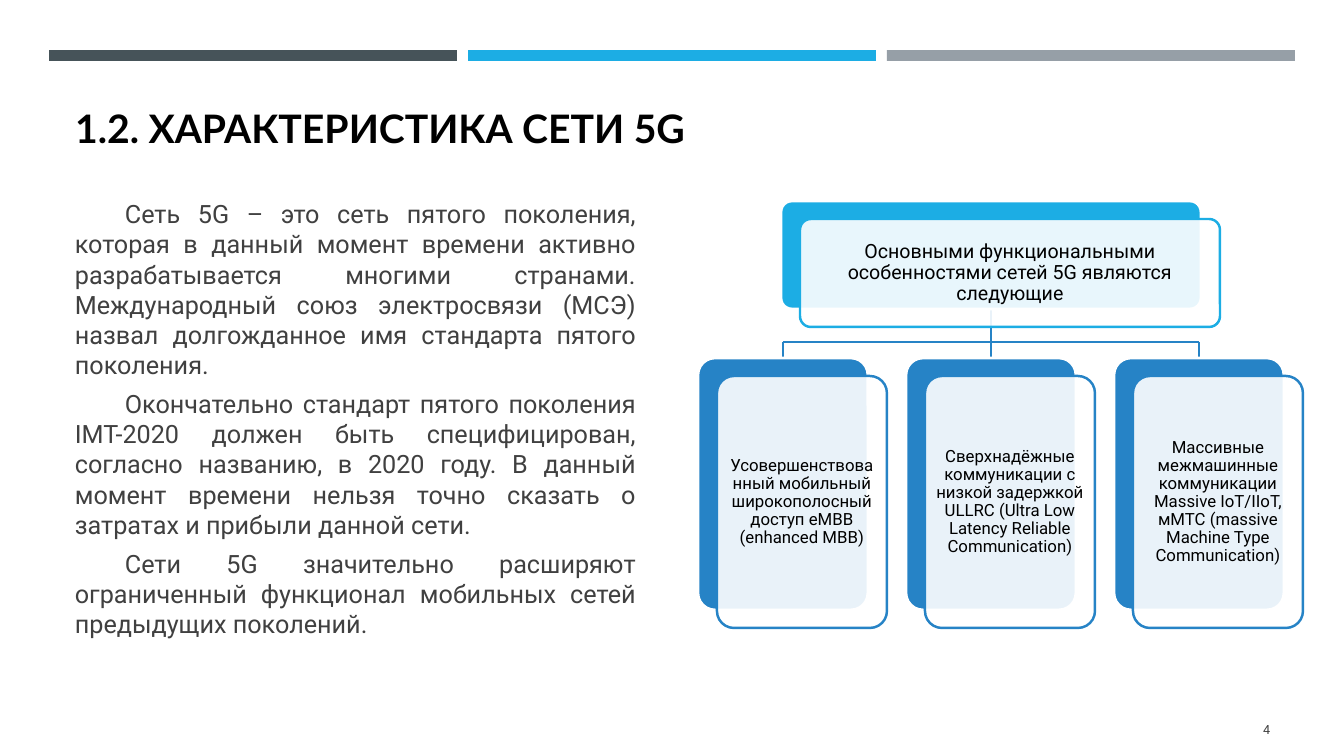
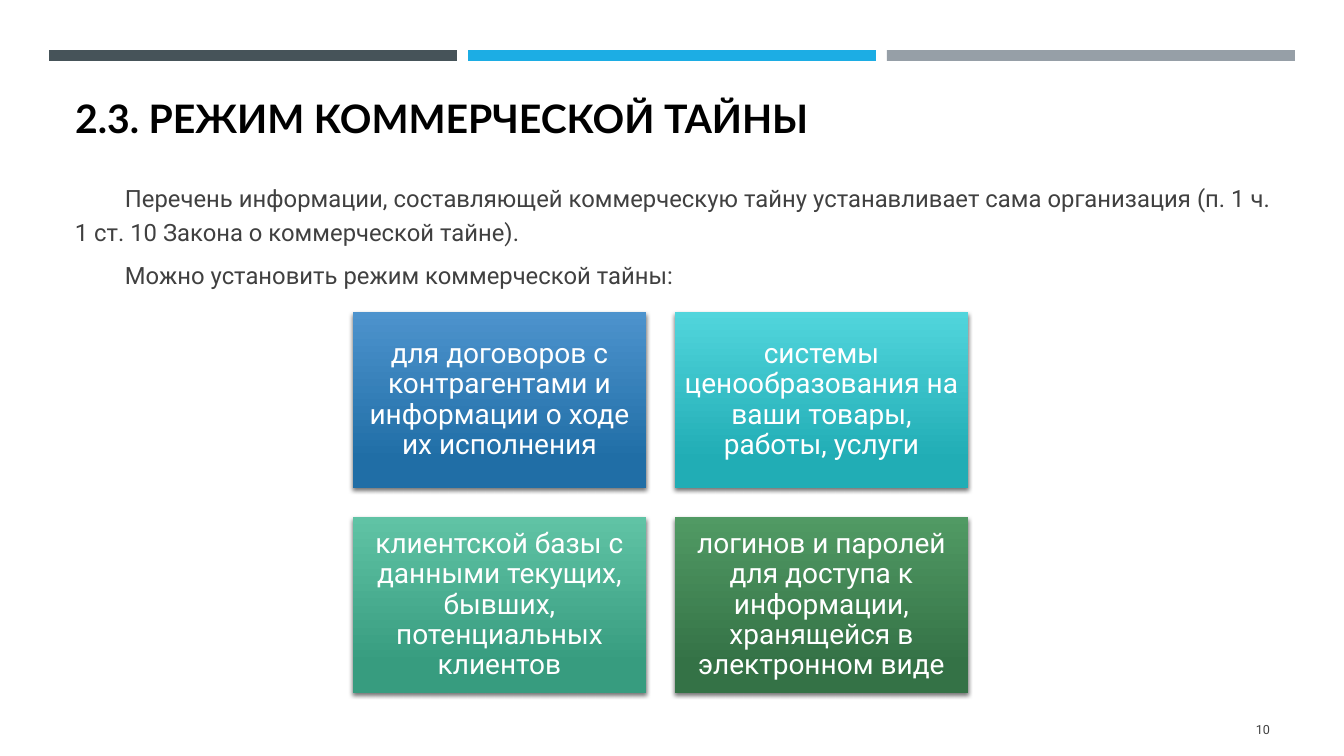
from lxml.etree import SubElement
from pptx import Presentation
from pptx.dml.color import RGBColor
from pptx.enum.shapes import MSO_CONNECTOR, MSO_SHAPE
from pptx.enum.text import MSO_ANCHOR, MSO_AUTO_SIZE, PP_ALIGN
from pptx.oxml.ns import qn
from pptx.util import Pt

RECT, ROUND = MSO_SHAPE.RECTANGLE, MSO_SHAPE.ROUNDED_RECTANGLE
LINE = MSO_CONNECTOR.STRAIGHT
MID, LOW = MSO_ANCHOR.MIDDLE, MSO_ANCHOR.BOTTOM
LEFT, RIGHT = PP_ALIGN.LEFT, PP_ALIGN.RIGHT
MIDDLE, JUST = PP_ALIGN.CENTER, PP_ALIGN.JUSTIFY
NO_FIT = MSO_AUTO_SIZE.NONE

SCALE = 914400 / 100.8
HEAD, BODY = "Lato", "Roboto"
COLOR = {
    "slate": "465359", "sky": "1CADE4", "gray": "969FA7", "blue": "2683C6",
    "text": "404040", "black": "000000", "white": "FFFFFF",
}

FACTS = [
    "Сеть 5G – это сеть пятого поколения, которая в данный момент времени активно "
    "разрабатывается многими странами. Международный союз электросвязи (МСЭ) назвал "
    "долгожданное имя стандарта пятого поколения.",
    "Окончательно стандарт пятого поколения IMT-2020 должен быть специфицирован, "
    "согласно названию, в 2020 году. В данный момент времени нельзя точно сказать "
    "о затратах и прибыли данной сети.",
    "Сети 5G значительно расширяют ограниченный функционал мобильных сетей "
    "предыдущих поколений.",
]
ROOT = "Основными функциональными особенностями сетей 5G являются следующие"
KINDS = [
    "Усовершенствованный мобильный широкополосный доступ eMBB (enhanced MBB)",
    "Сверхнадёжные коммуникации с низкой задержкой ULLRC "
    "(Ultra Low Latency Reliable Communication)",
    "Массивные межмашинные коммуникации Massive IoT/IIoT, мMTC "
    "(massive Machine Type Communication)",
]
RULES = [
    "Перечень информации, составляющей коммерческую тайну устанавливает сама "
    "организация (п. 1 ч. 1 ст. 10 Закона о коммерческой тайне).",
    "Можно установить режим коммерческой тайны:",
]
TILES = [
    ("для договоров с контрагентами и информации о ходе их исполнения",
     "4D93CD", "206EA6"),
    ("системы ценообразования на ваши товары, работы, услуги", "51D5DC", "21ADB5"),
    ("клиентской базы с данными текущих, бывших, потенциальных клиентов",
     "60C3A5", "379C7F"),
    ("логинов и паролей для доступа к информации, хранящейся в электронном виде",
     "519A64", "347246"),
]


def px(*vals):
    """Turn px lengths into EMU."""
    return [round(v * SCALE) for v in vals]


def rgb(name):
    """Look up a named colour, or read a hex string."""
    return RGBColor.from_string(COLOR.get(name, name))


def write(shape, texts, size, color, align, anchor=MID, font=BODY, bold=False,
          inset=None, indent=0, after=0, space=1.0):
    """Fill a shape with evenly styled paragraphs."""
    frame = shape.text_frame
    frame.word_wrap = True
    frame.auto_size = NO_FIT
    frame.vertical_anchor = anchor
    if inset is not None:
        frame.margin_left = frame.margin_right = px(inset)[0]
        frame.margin_top = frame.margin_bottom = px(inset)[0]
    for i, text in enumerate(texts):
        para = frame.add_paragraph() if i else frame.paragraphs[0]
        para.text = text
        para.alignment = align
        para.line_spacing = space
        para.space_before, para.space_after = Pt(0), Pt(after)
        para.font.name, para.font.size = font, Pt(size)
        para.font.bold, para.font.color.rgb = bold, rgb(color)
        if indent:
            para._p.get_or_add_pPr().set("indent", str(px(indent)[0]))


def label(slide, box, texts, size, color, align, **style):
    """Add a text box."""
    write(slide.shapes.add_textbox(*px(*box)), texts, size, color, align, **style)


def block(slide, kind, box, fill=None, edge=None, width=0):
    """Add a flat shape with an optional fill and edge."""
    shape = slide.shapes.add_shape(kind, *px(*box))
    shape.shadow.inherit = False
    if fill:
        shape.fill.solid()
        shape.fill.fore_color.rgb = rgb(fill)
    if edge:
        shape.line.color.rgb = rgb(edge)
        shape.line.width = Pt(width)
    else:
        shape.line.fill.background()
    return shape


def link(slide, *ends):
    """Draw a plain blue line."""
    line = slide.shapes.add_connector(LINE, *px(*ends))
    line.line.color.rgb = rgb("blue")
    line.line.width = Pt(1.75)
    SubElement(line._element.spPr, qn("a:effectLst"))


def page(deck, title, high, number):
    """Start a slide with bands, title and page number."""
    slide = deck.slides.add_slide(deck.slide_layouts[5])
    for i, name in enumerate(("slate", "sky", "gray")):
        block(slide, RECT, (49 + i * 419, 50, 408, 11), name)
    head = slide.shapes.title
    head.left, head.top, head.width, head.height = px(65, 78, 1216, high)
    write(head, [title], 28, "black", LEFT, LOW, HEAD, True)
    label(slide, (1164, 709, 116, 40), [number], 9, "text", RIGHT)
    return slide


def card(slide, box, color, text, size):
    """Add a filled card with a pale text card shifted over it."""
    x, y, w, h = box
    block(slide, ROUND, box, color, "white", 2).adjustments[0] = 0.1
    front = block(slide, ROUND, (x + 19, y + 18, w, h), "white", color, 1.75)
    front.adjustments[0] = 0.1
    tint = front._element.spPr.find(qn("a:solidFill"))[0]
    SubElement(tint, qn("a:alpha"), val="90000")
    write(front, [text], size, "black", MIDDLE, inset=5, space=0.9)


def tree(slide, box):
    """Draw a root card joined to a row of child cards."""
    x, y, w, h = box
    wide, tall, root_w, root_h = 170, 252, 420, 108
    step = (w - wide) // (len(KINDS) - 1)
    top = y + h - tall
    bar = top - 16
    mids = [x + wide // 2 + i * step for i in range(len(KINDS))]
    hub = x + w // 2
    link(slide, hub, y + root_h, hub, bar)
    link(slide, mids[0], bar, mids[-1], bar)
    for mid in mids:
        link(slide, mid, bar, mid, top)
    card(slide, (hub - root_w // 2, y, root_w, root_h), "sky", ROOT, 14)
    for mid, text in zip(mids, KINDS):
        card(slide, (mid - wide // 2, top, wide, tall), "blue", text, 12)


def tile(slide, box, text, light, dark):
    """Add a shaded tile with a soft shadow."""
    shape = block(slide, RECT, box)
    shape.fill.gradient()
    shape.fill.gradient_angle = 270
    for stop, spot, color in zip(shape.fill.gradient_stops, (0, 0.84), (light, dark)):
        stop.position = spot
        stop.color.rgb = rgb(color)
    glow = SubElement(shape._element.spPr.find(qn("a:effectLst")), qn("a:outerShdw"),
                      blurRad=str(Pt(3)), dist=str(Pt(2)), dir="5400000",
                      rotWithShape="0")
    tint = SubElement(glow, qn("a:srgbClr"), val=COLOR["black"])
    SubElement(tint, qn("a:alpha"), val="55000")
    write(shape, [text], 20, "white", MIDDLE, inset=8, space=0.9)


def grid(slide, box, gap):
    """Lay the tiles out in two columns."""
    x, y, w, h = box
    wide, tall = (w - gap) // 2, (h - gap) // 2
    for i, item in enumerate(TILES):
        row, col = divmod(i, 2)
        spot = (x + col * (wide + gap), y + row * (tall + gap), wide, tall)
        tile(slide, spot, *item)


def main():
    """Build and save both slides."""
    deck = Presentation()
    deck.slide_width, deck.slide_height = px(1344, 756)

    slide = page(deck, "1.2. ХАРАКТЕРИСТИКА СЕТИ 5G", 78, "4")
    label(slide, (65, 177, 581, 483), FACTS, 18, "text", JUST, indent=50, after=6)
    tree(slide, (698, 201, 586, 409))

    slide = page(deck, "2.3. РЕЖИМ КОММЕРЧЕСКОЙ ТАЙНЫ", 68, "10")
    label(slide, (65, 169, 1216, 129), RULES, 17, "text", JUST,
          indent=50, after=6, space=1.2)
    grid(slide, (353, 312, 615, 382), 29)

    deck.save("out.pptx")


if __name__ == "__main__":
    main()
